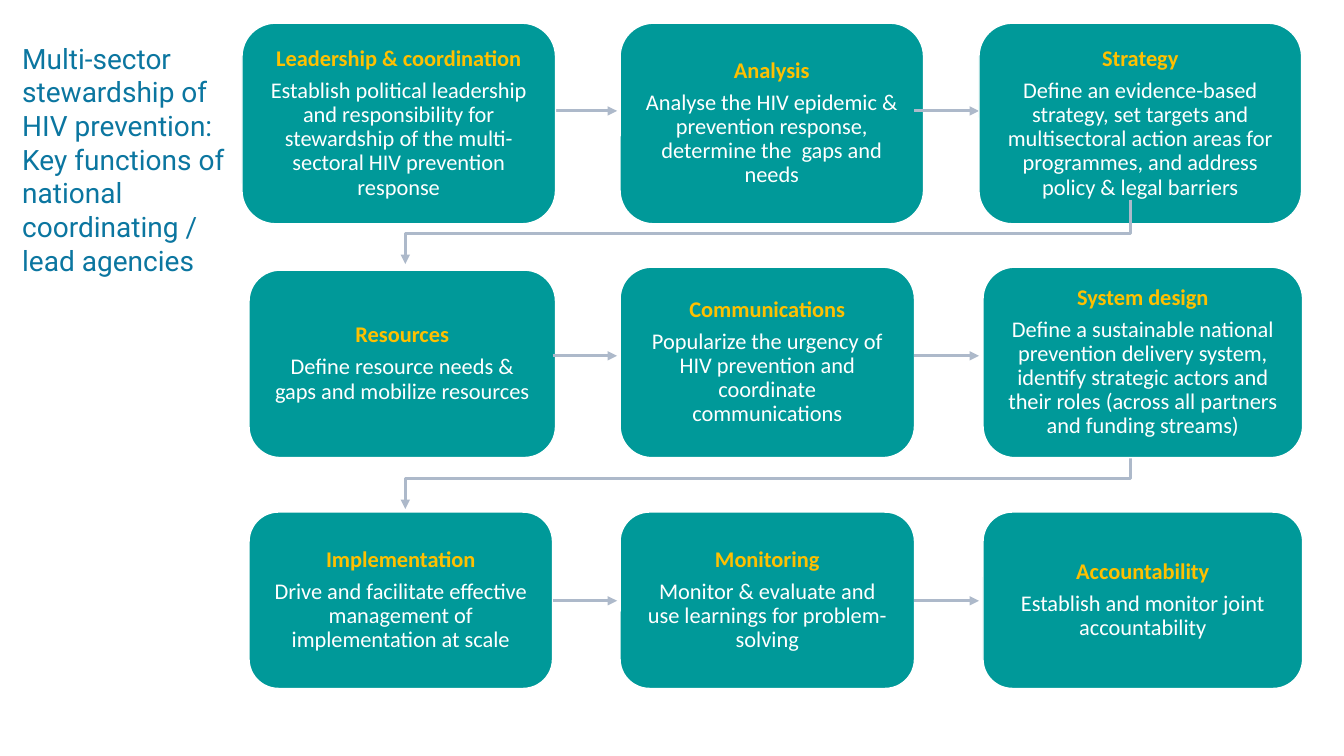
from lxml import etree
from pptx import Presentation
from pptx import util as u
from pptx.dml.color import RGBColor
from pptx.enum import shapes, text
from pptx.oxml import ns

HUES = {"title": "0B76A0", "box": "009999", "edge": "FFFFFF",
        "head": "FFC000", "body": "FFFFFF", "flow": "ADB9CA"}
TITLE = ("Multi-sector stewardship of HIV prevention: Key functions of "
         "national coordinating / lead agencies")
ROW = 2.43
STEPS = [
    (0, 1, (6.15, 0.23, 3.01, 1.99), "Analysis",
     "Analyse the HIV epidemic & prevention response, determine the  gaps and needs"),
    (0, 2, (9.71, 0.23, 3.2, 1.99), "Strategy",
     "Define an evidence-based strategy, set targets and multisectoral action areas "
     "for programmes, and address policy & legal barriers"),
    (1, 0, (2.47, 2.68, 3.04, 1.86), "Resources",
     "Define resource needs & gaps and mobilize resources"),
    (0, 0, (2.4, 0.23, 3.11, 1.99), "Leadership & coordination",
     "Establish political leadership and responsibility for stewardship of the "
     "multi-sectoral HIV prevention response"),
    (1, 1, (6.15, 2.65, 2.92, 1.89), "Communications",
     "Popularize the urgency of HIV prevention and coordinate communications"),
    (2, 0, (2.47, 5.08, 3.01, 1.75), "Implementation",
     "Drive and facilitate effective management of implementation at scale"),
    (1, 2, (9.75, 2.65, 3.17, 1.89), "System design",
     "Define a sustainable national prevention delivery system, identify strategic "
     "actors and their roles (across all partners and funding streams)"),
    (2, 1, (6.15, 5.08, 2.92, 1.75), "Monitoring",
     "Monitor & evaluate and use learnings for problem-solving"),
    (2, 2, (9.75, 5.08, 3.17, 1.75), "Accountability",
     "Establish and monitor joint accountability"),
]


def assign(item, form):
    for key, value in form.items():
        setattr(item, key, value)


def hue(name):
    return RGBColor.from_string(HUES[name])


def write(para, words, tint, font, form):
    para.text = words
    assign(para, form)
    assign(para.font, font)
    para.font.color.rgb = hue(tint)


def title(slide):
    shape = slide.shapes.title
    assign(shape, dict(zip(("left", "top", "width", "height"),
                           map(u.Inches, (0.12, 0.36, 2.28, 2.46)))))
    assign(shape.text_frame, {"word_wrap": True,
                              "auto_size": text.MSO_AUTO_SIZE.SHAPE_TO_FIT_TEXT,
                              "vertical_anchor": text.MSO_ANCHOR.TOP})
    write(shape.text_frame.paragraphs[0], TITLE, "title",
          {"name": "Roboto", "size": u.Pt(20)}, {"alignment": text.PP_ALIGN.LEFT})


def box(slide, place, head, body):
    shape = slide.shapes.add_shape(shapes.MSO_SHAPE.ROUNDED_RECTANGLE,
                                   *map(u.Inches, place))
    shape.shadow.inherit = False
    shape.fill.solid()
    shape.fill.fore_color.rgb = hue("box")
    shape.line.color.rgb = hue("edge")
    shape.line.width = u.Pt(1)
    frame = shape.text_frame
    assign(frame, {"word_wrap": True, "vertical_anchor": text.MSO_ANCHOR.MIDDLE})
    assign(frame, {f"margin_{side}": u.Inches(0.12)
                   for side in ("left", "top", "right", "bottom")})
    font = {"name": "Calibri", "size": u.Pt(16)}
    form = {"alignment": text.PP_ALIGN.CENTER, "line_spacing": 0.9}
    write(frame.paragraphs[0], head, "head", {**font, "bold": True},
          {**form, "space_after": u.Pt(5.6)})
    write(frame.add_paragraph(), body, "body", {**font, "bold": False}, form)


def trim(shape):
    shape.line.color.rgb = hue("flow")
    shape.line.width = u.Pt(2.25)
    etree.SubElement(shape.line._get_or_add_ln(), ns.qn("a:tailEnd"), type="triangle")


def arrow(slide, left, top):
    line = slide.shapes.add_connector(shapes.MSO_CONNECTOR.STRAIGHT, u.Inches(left),
                                      u.Inches(top), u.Inches(left + 0.64), u.Inches(top))
    trim(line)
    etree.SubElement(line._element.spPr, ns.qn("a:effectLst"))


def elbow(slide, top):
    spots = [(u.Inches(x), u.Inches(top + y))
             for x, y in ((11.21, 0), (11.21, 0.34), (4.02, 0.34), (4.02, 0.64))]
    pen = slide.shapes.build_freeform(*spots[0])
    pen.add_line_segments(spots[1:], close=False)
    shape = pen.convert_to_shape()
    shape.fill.background()
    trim(shape)
    shape.shadow.inherit = False


def main():
    deck = Presentation()
    assign(deck, {"slide_width": u.Inches(13.33), "slide_height": u.Inches(7.5)})
    slide = deck.slides.add_slide(deck.slide_layouts[5])
    title(slide)
    for row, col, place, head, body in STEPS:
        if col:
            arrow(slide, (5.48, 9.07)[col - 1], 1.1 + row * ROW)
        elif row:
            elbow(slide, 1.98 + (row - 1) * ROW)
        box(slide, place, head, body)
    deck.save("out.pptx")


if __name__ == "__main__":
    main()
